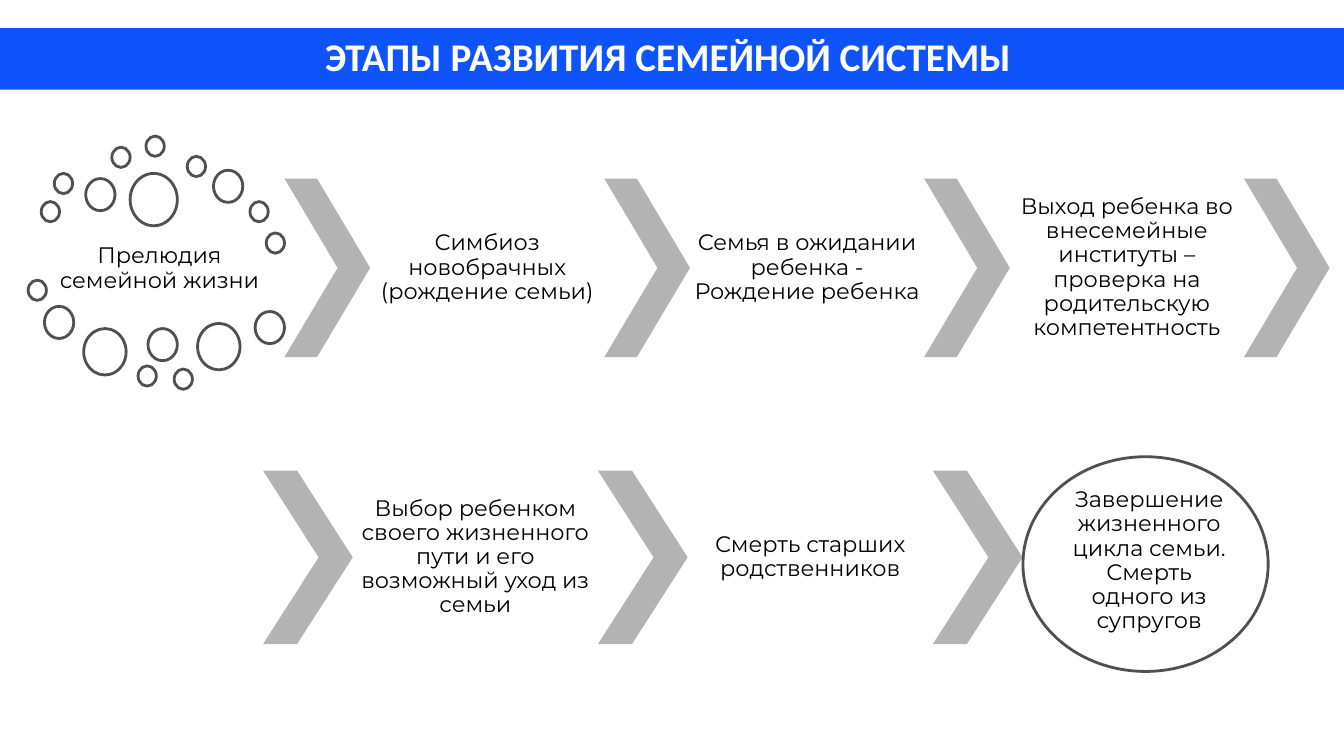
from pptx import Presentation
from pptx import util as u
from pptx.dml.color import RGBColor
from pptx.enum import shapes, text

BLUE = RGBColor(0x0F, 0x54, 0xFB)
GRAY = RGBColor(0xB3, 0xB3, 0xB3)
DARK = RGBColor(0x50, 0x50, 0x50)
WHITE = RGBColor(0xFF, 0xFF, 0xFF)
BLACK = RGBColor(0, 0, 0)

TITLE_FONT = {"name": "Calibri", "size": u.Pt(28), "bold": True}
STAGE_FONT = {"name": "Montserrat", "size": u.Pt(16), "bold": False}

PRELUDE = "Прелюдия семейной жизни"
FIRST_ROW = [
    "Симбиоз новобрачных (рождение семьи)",
    "Семья в ожидании ребенка - Рождение ребенка",
    "Выход ребенка во внесемейные институты – проверка на родительскую компетентность",
]
SECOND_ROW = [
    "Выбор ребенком своего жизненного пути и его возможный уход из семьи",
    "Смерть старших родственников",
]
FINALE = "Завершение жизненного цикла семьи. Смерть одного из супругов"

BUBBLES = {
    (0.46, 0.51): [
        (1.04, 5.08), (1.37, 4.37), (2.82, 3.71), (3.68, 3.43), (4.72, 3.94),
        (6.3, 5.08), (6.71, 5.87), (0.71, 7.06), (3.48, 9.22), (4.39, 9.3),
    ],
    (0.74, 0.81): [
        (2.16, 4.5), (5.38, 4.29), (1.12, 7.72), (3.73, 8.28), (6.43, 7.85),
    ],
    (1.07, 1.17): [(2.11, 8.28), (4.98, 8.15)],
    (1.19, 1.32): [(3.28, 4.37)],
}


def set_all(target, values):
    for name, value in values.items():
        setattr(target, name, value)


def write(frame, words, font, color, margin, frame_format, para_format):
    sides = ("margin_left", "margin_top", "margin_right", "margin_bottom")
    set_all(frame, dict.fromkeys(sides, u.Cm(margin)))
    set_all(frame, {"word_wrap": True, "auto_size": text.MSO_AUTO_SIZE.NONE})
    set_all(frame, frame_format)
    para = frame.paragraphs[0]
    set_all(para, {"alignment": text.PP_ALIGN.CENTER, **para_format})
    span = para.add_run()
    span.text = words
    set_all(span.font, font)
    span.font.color.rgb = color


def add_figure(holder, kind, place, fill, line=None):
    figure = holder.add_shape(kind, *map(u.Cm, place))
    figure.shadow.inherit = False
    figure.fill.solid()
    figure.fill.fore_color.rgb = fill
    if line is None:
        figure.line.fill.background()
    else:
        figure.line.color.rgb = line
        figure.line.width = u.Pt(2)
    return figure


def add_ring(holder, place):
    add_figure(holder, shapes.MSO_SHAPE.OVAL, place, WHITE, DARK)


def add_label(holder, words, place):
    box = holder.add_textbox(*map(u.Cm, place))
    write(box.text_frame, words, STAGE_FONT, BLACK, 0.02,
          {"vertical_anchor": text.MSO_ANCHOR.MIDDLE}, {"line_spacing": 0.9})


def add_stages(holder, stages, left, top, arrow_width, label_width, height):
    pitch = arrow_width + label_width
    for index in range(len(stages) + 1):
        start = left + index * pitch
        arrow = add_figure(holder, shapes.MSO_SHAPE.CHEVRON,
                           (start, top, arrow_width, height), GRAY)
        arrow.adjustments[0] = 0.62
        if index < len(stages):
            add_label(holder, stages[index],
                      (start + arrow_width, top, label_width, height))


def add_title(page, words):
    title = page.shapes.title
    band = add_figure(page.shapes, shapes.MSO_SHAPE.RECTANGLE,
                      (0, 0.71, 33.87, 1.55), BLUE)
    title.element.addprevious(band.element)
    place = dict(left=0.33, top=0.48, width=33.22, height=2.13)
    set_all(title, {side: u.Cm(length) for side, length in place.items()})
    write(title.text_frame, words, TITLE_FONT, WHITE, 0.33,
          {"vertical_anchor": text.MSO_ANCHOR.TOP}, {})


def main():
    deck = Presentation()
    set_all(deck, {"slide_width": u.Cm(33.87), "slide_height": u.Cm(19.05)})
    page = deck.slides.add_slide(deck.slide_layouts[5])
    add_title(page, "ЭТАПЫ РАЗВИТИЯ СЕМЕЙНОЙ СИСТЕМЫ ")

    upper = page.shapes.add_group_shape().shapes
    add_label(upper, PRELUDE, (1.07, 5.72, 5.9, 2.11))
    for size, corners in BUBBLES.items():
        for corner in corners:
            add_ring(upper, corner + size)
    add_stages(upper, FIRST_ROW, 7.17, 4.5, 2.16, 5.9, 4.5)

    lower = page.shapes.add_group_shape().shapes
    add_stages(lower, SECOND_ROW, 6.63, 11.86, 2.26, 6.18, 4.37)
    add_ring(lower, (25.78, 11.51, 6.18, 5.41))
    add_label(lower, FINALE, (26.8, 12.27, 4.32, 3.73))

    deck.save("out.pptx")


if __name__ == "__main__":
    main()
